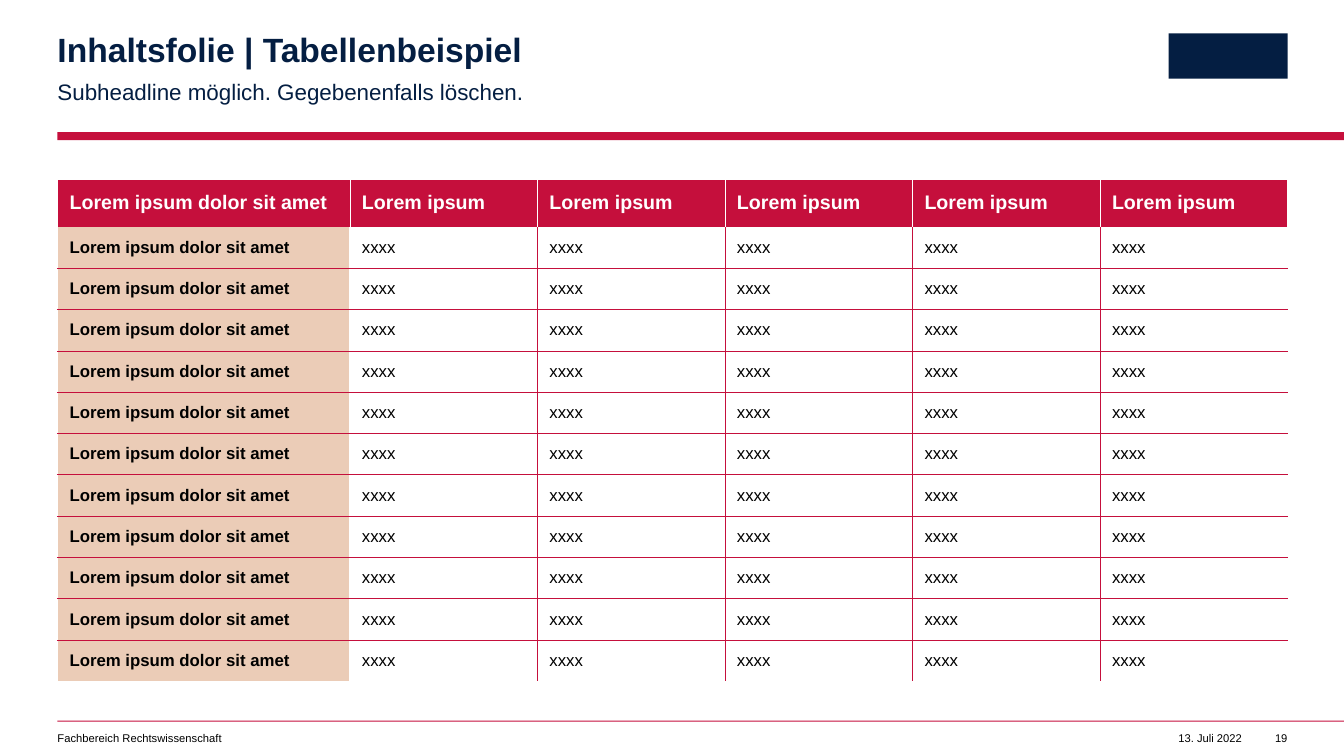
from dataclasses import dataclass

from lxml import etree
from pptx import Presentation
from pptx import util as u
from pptx.dml.color import RGBColor
from pptx.enum import shapes, text
from pptx.oxml.ns import qn

FONT = "Arial"
RED, NAVY, SAND, WHITE, BLACK = "C50F3C", "041E42", "EBCCB7", "FFFFFF", "000000"
WIDTH, MARGIN = 13.33, 0.57
COLUMN_WIDTHS = [2.9] + [1.86] * 5
ROW_HEIGHTS = [0.47] + [0.41] * 11
LAST_COLUMN, LAST_ROW = len(COLUMN_WIDTHS) - 1, len(ROW_HEIGHTS) - 1


@dataclass
class Block:
    left: float
    top: float
    width: float
    height: float
    color: str


@dataclass
class Label:
    words: str
    left: float
    top: float
    width: float
    height: float
    size: float = 8
    color: str = BLACK
    bold: bool = False
    align: text.PP_ALIGN = text.PP_ALIGN.LEFT
    anchor: text.MSO_ANCHOR = text.MSO_ANCHOR.TOP
    spacing: float = 1.0
    wrap: bool = True


@dataclass
class Border:
    color: str
    points: float


HAIRLINE, THIN, FRAME = Border(RED, 0.25), Border(WHITE, 0.5), Border(WHITE, 1)

BLOCKS = [
    Block(MARGIN, 1.31, WIDTH - MARGIN, 0.08, RED),
    Block(MARGIN, 7.15, WIDTH - MARGIN, 0.01, RED),
    Block(11.59, 0.33, 1.18, 0.45, NAVY),
]
TITLE = Label("Inhaltsfolie | Tabellenbeispiel", MARGIN, 0.33, 7.49, 0.36, 24, NAVY, True,
              anchor=text.MSO_ANCHOR.MIDDLE, spacing=0.9)
LABELS = [
    Label("Subheadline möglich. Gegebenenfalls löschen.", MARGIN, 0.75, 7.49, 0.27, 16, NAVY,
          spacing=1.1),
    Label("Fachbereich Rechtswissenschaft", MARGIN, 7.26, 5.98, 0.13),
    Label("13. Juli 2022", 11.39, 7.26, 0.93, 0.13, align=text.PP_ALIGN.RIGHT, wrap=False),
    Label("19", 12.56, 7.26, 0.21, 0.13, align=text.PP_ALIGN.RIGHT, wrap=False),
]


def rgb(color: str) -> RGBColor:
    return RGBColor.from_string(color)


def style_runs(paragraph, size: float, color: str, bold: bool) -> None:
    for run in paragraph.runs:
        run.font.name = FONT
        run.font.size = u.Pt(size)
        run.font.bold = bold
        run.font.color.rgb = rgb(color)


def draw_block(slide, block: Block) -> None:
    bar = slide.shapes.add_shape(
        shapes.MSO_SHAPE.RECTANGLE, u.Inches(block.left), u.Inches(block.top),
        u.Inches(block.width), u.Inches(block.height))
    bar.shadow.inherit = False
    bar.fill.solid()
    bar.fill.fore_color.rgb = rgb(block.color)
    bar.line.fill.background()


def fill_label(holder, label: Label) -> None:
    holder.left, holder.top = u.Inches(label.left), u.Inches(label.top)
    holder.width, holder.height = u.Inches(label.width), u.Inches(label.height)
    frame = holder.text_frame
    frame.text = label.words
    frame.margin_left = frame.margin_top = frame.margin_right = frame.margin_bottom = 0
    frame.auto_size = text.MSO_AUTO_SIZE.NONE
    frame.word_wrap = label.wrap
    frame.vertical_anchor = label.anchor
    paragraph = frame.paragraphs[0]
    paragraph.alignment = label.align
    paragraph.line_spacing = label.spacing
    style_runs(paragraph, label.size, label.color, label.bold)


def cell_borders(row: int, column: int) -> dict[str, Border | None]:
    inner = HAIRLINE if row else THIN
    left = FRAME if column == 0 or (row and column == 1) else inner
    right = FRAME if column == LAST_COLUMN or (row and column == 0) else inner
    top = FRAME if row == 0 else HAIRLINE if row > 1 else None
    bottom = HAIRLINE if 0 < row < LAST_ROW else None
    return {"a:lnL": left, "a:lnR": right, "a:lnT": top, "a:lnB": bottom}


def set_borders(cell, borders: dict[str, Border | None]) -> None:
    properties = cell._tc.get_or_add_tcPr()
    for position, (side, border) in enumerate(borders.items()):
        edge = etree.Element(qn(side))
        properties.insert(position, edge)
        if border is None:
            etree.SubElement(edge, qn("a:noFill"))
            continue
        edge.set("w", str(u.Pt(border.points)))
        paint = etree.SubElement(edge, qn("a:solidFill"))
        etree.SubElement(paint, qn("a:srgbClr"), val=border.color)


def fill_cell(cell, row: int, column: int) -> None:
    if column == 0:
        cell.text_frame.text = "Lorem ipsum dolor sit amet"
    else:
        cell.text_frame.text = "xxxx" if row else "Lorem ipsum"
    style_runs(cell.text_frame.paragraphs[0], 12 if row else 14,
               BLACK if row else WHITE, row == 0 or column == 0)
    cell.vertical_anchor = text.MSO_ANCHOR.MIDDLE
    cell.margin_left = cell.margin_right = u.Inches(0.12)
    cell.margin_top = cell.margin_bottom = u.Inches(0.04)
    if row and column:
        cell.fill.background()
    else:
        cell.fill.solid()
        cell.fill.fore_color.rgb = rgb(SAND if row else RED)
    set_borders(cell, cell_borders(row, column))


def draw_table(slide) -> None:
    table = slide.shapes.add_table(
        len(ROW_HEIGHTS), len(COLUMN_WIDTHS), u.Inches(MARGIN), u.Inches(1.78),
        u.Inches(sum(COLUMN_WIDTHS)), u.Inches(sum(ROW_HEIGHTS))).table
    table.horz_banding = False
    table.first_col = True
    for column, width in zip(table.columns, COLUMN_WIDTHS):
        column.width = u.Inches(width)
    for row, height in zip(table.rows, ROW_HEIGHTS):
        row.height = u.Inches(height)
    for row in range(len(ROW_HEIGHTS)):
        for column in range(len(COLUMN_WIDTHS)):
            fill_cell(table.cell(row, column), row, column)


def main() -> None:
    deck = Presentation()
    deck.slide_width, deck.slide_height = u.Inches(WIDTH), u.Inches(7.5)
    slide = deck.slides.add_slide(deck.slide_layouts.get_by_name("Title Only"))
    fill_label(slide.shapes.title, TITLE)
    for block in BLOCKS:
        draw_block(slide, block)
    for label in LABELS:
        fill_label(slide.shapes.add_textbox(0, 0, 0, 0), label)
    draw_table(slide)
    deck.save("out.pptx")


if __name__ == "__main__":
    main()
